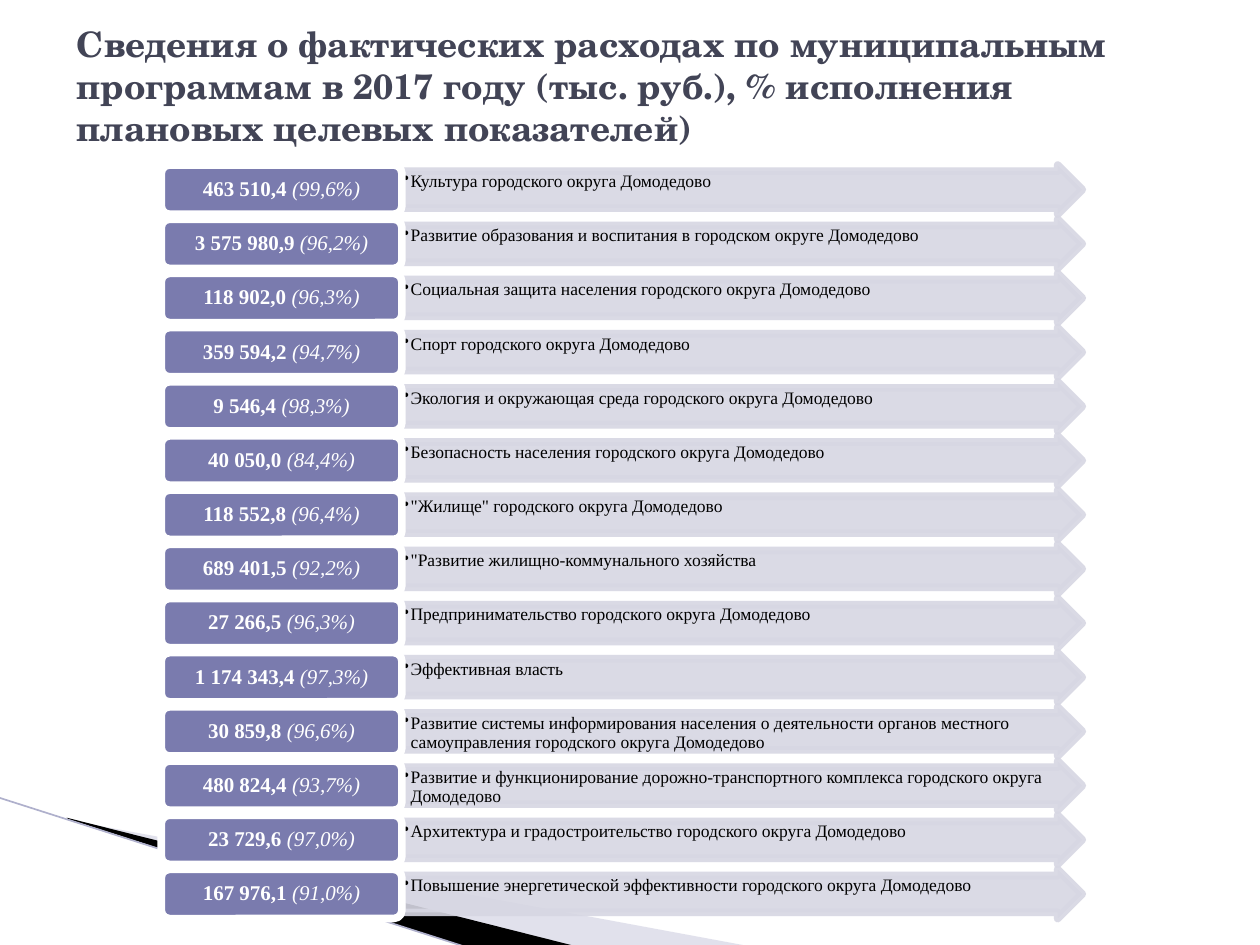
from lxml import etree
from pptx import Presentation
from pptx.dml.color import RGBColor
from pptx.enum.shapes import MSO_CONNECTOR, MSO_SHAPE
from pptx.enum.text import MSO_ANCHOR, MSO_AUTO_SIZE, PP_ALIGN
from pptx.oxml.ns import qn
from pptx.util import Inches, Pt

STRAIGHT = MSO_CONNECTOR.STRAIGHT
ARROW, ROUNDED = MSO_SHAPE.RIGHT_ARROW, MSO_SHAPE.ROUNDED_RECTANGLE
TOP, MIDDLE = MSO_ANCHOR.TOP, MSO_ANCHOR.MIDDLE
LEFT, CENTER = PP_ALIGN.LEFT, PP_ALIGN.CENTER

WHITE = RGBColor(0xFF, 0xFF, 0xFF)
BLACK = RGBColor(0, 0, 0)
SLATE = RGBColor(0x42, 0x44, 0x56)
VIOLET = RGBColor(0x7A, 0x7B, 0xAE)
PALE = RGBColor(0xD7, 0xD7, 0xE3)
LILAC = RGBColor(0xB6, 0xB6, 0xD1)
EDGE = RGBColor(0xAF, 0xB0, 0xCC)

TITLE_FONT, BODY_FONT = "TeX Gyre Schola", "Times New Roman"

TITLE = ("Сведения о фактических расходах по муниципальным программам в 2017 году "
         "(тыс. руб.), % исполнения плановых целевых показателей)")

PROGRAMS = [
    ("463 510,4", "99,6%", "Культура городского округа Домодедово"),
    ("3 575 980,9", "96,2%",
     "Развитие образования и воспитания в городском округе Домодедово"),
    ("118 902,0", "96,3%", "Социальная защита населения городского округа Домодедово"),
    ("359 594,2", "94,7%", "Спорт городского округа Домодедово"),
    ("9 546,4", "98,3%", "Экология и окружающая среда городского округа Домодедово"),
    ("40 050,0", "84,4%", "Безопасность населения городского округа Домодедово"),
    ("118 552,8", "96,4%", '"Жилище" городского округа Домодедово'),
    ("689 401,5", "92,2%", '"Развитие жилищно-коммунального хозяйства'),
    ("27 266,5", "96,3%", "Предпринимательство городского округа Домодедово"),
    ("1 174 343,4", "97,3%", "Эффективная власть"),
    ("30 859,8", "96,6%",
     "Развитие системы информирования населения о деятельности органов местного "
     "самоуправления городского округа Домодедово"),
    ("480 824,4", "93,7%",
     "Развитие и функционирование дорожно-транспортного комплекса городского округа "
     "Домодедово"),
    ("23 729,6", "97,0%", "Архитектура и градостроительство городского округа Домодедово"),
    ("167 976,1", "91,0%",
     "Повышение энергетической эффективности городского округа Домодедово"),
]

# Corner points, colour and opacity in percent
WEDGES = [
    ([(0.55, 6.51), (5.95, 7.51), (4.56, 7.51), (0.55, 6.5)], LILAC, 40),
    ([(0.53, 6.49), (4.57, 7.51), (3.72, 7.52), (0.54, 6.5)], BLACK, 100),
]

AMOUNT_LEFT, AMOUNT_WIDTH = 1.28, 1.91
ARROW_LEFT, ARROW_WIDTH = AMOUNT_LEFT + AMOUNT_WIDTH, 5.4
ROW_TOP, ROW_STEP, ROW_HEIGHT = 1.31, 0.43, 0.39
OUTLINE = Pt(4.33)


def set_opacity(shape, percent):
    """Apply the opacity to every solid colour of the shape's fill and line."""
    for color in shape._element.spPr.iter(qn("a:srgbClr")):
        etree.SubElement(color, qn("a:alpha"), val=str(percent * 1000))


def add_wedge(shapes, points, color, opacity):
    corners = [(Inches(x), Inches(y)) for x, y in points]
    builder = shapes.build_freeform(*corners[0])
    builder.add_line_segments(corners[1:], close=True)
    wedge = builder.convert_to_shape()
    wedge.shadow.inherit = False
    wedge.fill.solid()
    wedge.fill.fore_color.rgb = color
    wedge.line.fill.background()
    if opacity < 100:
        set_opacity(wedge, opacity)


def add_panel(shapes, kind, left, top, width, fill, outline):
    panel = shapes.add_shape(kind, Inches(left), Inches(top),
                             Inches(width), Inches(ROW_HEIGHT))
    panel.shadow.inherit = False
    panel.fill.solid()
    panel.fill.fore_color.rgb = fill
    panel.line.color.rgb = outline
    panel.line.width = OUTLINE
    return panel


def start_text(panel, anchor, align, inset_x, inset_y):
    """Set up the panel's text frame and return its first paragraph."""
    frame = panel.text_frame
    frame.word_wrap = True
    frame.vertical_anchor = anchor
    frame.margin_left = frame.margin_right = Inches(inset_x)
    frame.margin_top = frame.margin_bottom = Inches(inset_y)
    paragraph = frame.paragraphs[0]
    paragraph.alignment = align
    paragraph.line_spacing = 0.9
    return paragraph


def add_run(paragraph, text, font, size, color, bold=False, italic=False):
    run = paragraph.add_run()
    run.text = text
    run.font.name = font
    run.font.size = Pt(size)
    run.font.color.rgb = color
    run.font.bold = bold
    run.font.italic = italic


def add_bullet(paragraph, indent):
    properties = paragraph._p.get_or_add_pPr()
    properties.set("marL", str(Inches(indent)))
    properties.set("indent", str(-Inches(indent)))
    etree.SubElement(properties, qn("a:buChar"), char="•")


def add_program(shapes, top, amount, share, name):
    arrow = add_panel(shapes, ARROW, ARROW_LEFT, top, ARROW_WIDTH, PALE, PALE)
    arrow.adjustments[0], arrow.adjustments[1] = 0.75, 0.5
    set_opacity(arrow, 90)
    label = start_text(arrow, TOP, LEFT, 0.01, 0.01)
    add_bullet(label, 0.06)
    add_run(label, name, BODY_FONT, 10, BLACK)

    box = add_panel(shapes, ROUNDED, AMOUNT_LEFT, top, AMOUNT_WIDTH, VIOLET, WHITE)
    figures = start_text(box, MIDDLE, CENTER, 0.05, 0.03)
    add_run(figures, f"{amount} ", BODY_FONT, 12, WHITE, bold=True)
    add_run(figures, f"({share})", BODY_FONT, 12, WHITE, italic=True)


def main():
    deck = Presentation()
    deck.slide_width, deck.slide_height = Inches(10), Inches(7.5)
    slide = deck.slides.add_slide(deck.slide_layouts[5])
    shapes = slide.shapes

    for points, color, opacity in WEDGES:
        add_wedge(shapes, points, color, opacity)
    edge = shapes.add_connector(STRAIGHT, Inches(-0.01), Inches(6.33),
                                Inches(3.71), Inches(7.52))
    edge.line.color.rgb = EDGE
    edge.line.width = Pt(0.95)
    etree.SubElement(edge._element.spPr, qn("a:effectLst"))

    for row, program in enumerate(PROGRAMS):
        add_program(shapes, ROW_TOP + row * ROW_STEP, *program)

    title = shapes.title
    title.left, title.top = Inches(0.51), Inches(0.13)
    title.width, title.height = Inches(9.06), Inches(1.1)
    title.text_frame.auto_size = MSO_AUTO_SIZE.NONE
    title.text_frame.vertical_anchor = MIDDLE
    heading = title.text_frame.paragraphs[0]
    heading.alignment = LEFT
    add_run(heading, TITLE, TITLE_FONT, 20, SLATE, bold=True)

    deck.save("out.pptx")


if __name__ == "__main__":
    main()
